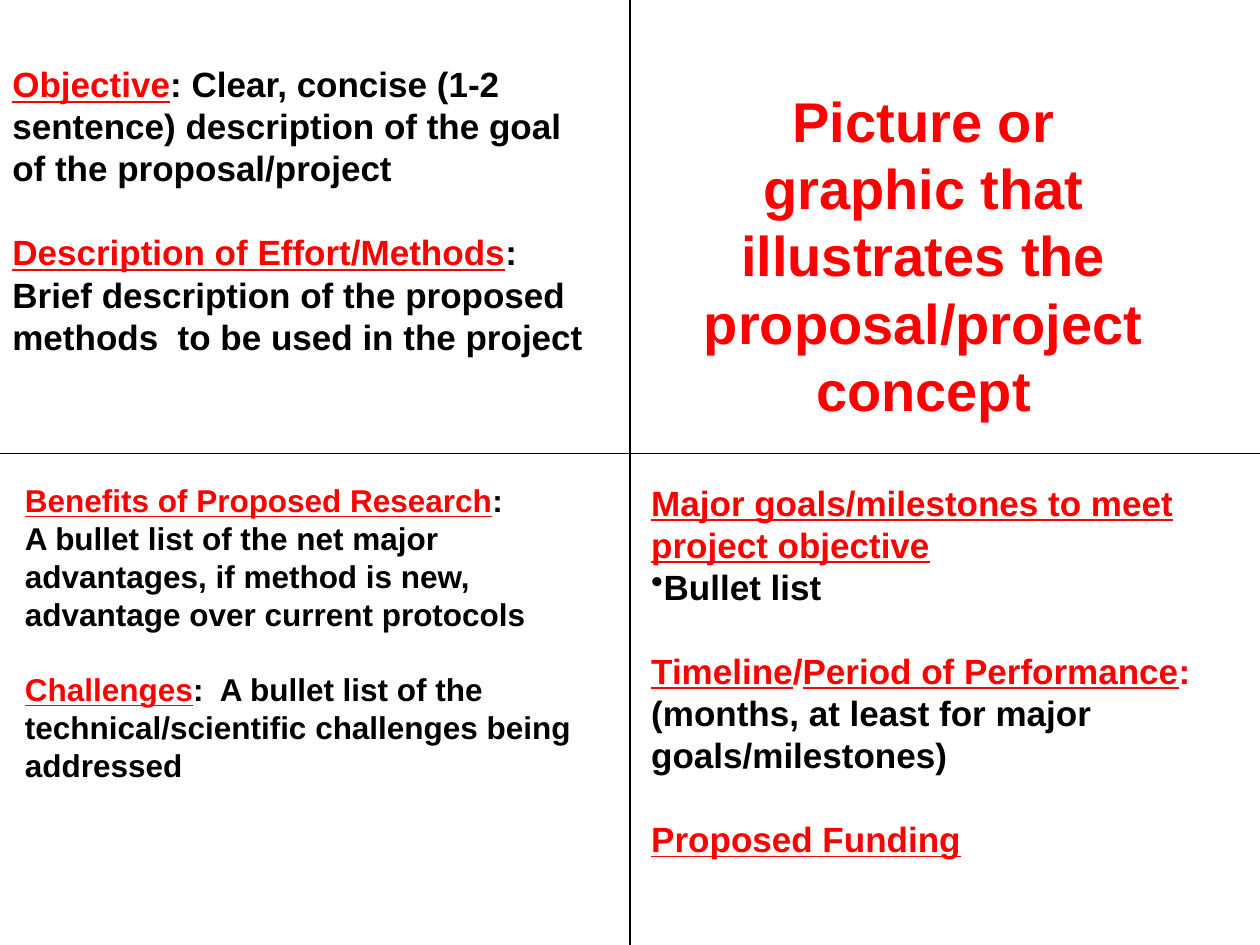
from lxml import etree
from pptx import Presentation
from pptx.dml.color import RGBColor
from pptx.enum.shapes import MSO_CONNECTOR
from pptx.enum.text import MSO_AUTO_SIZE, PP_ALIGN
from pptx.oxml.ns import qn
from pptx.util import Inches, Pt

STRAIGHT = MSO_CONNECTOR.STRAIGHT
GROW = MSO_AUTO_SIZE.SHAPE_TO_FIT_TEXT
LEFT, CENTER = PP_ALIGN.LEFT, PP_ALIGN.CENTER

COLORS = {"heading": "FF0000", "body": "000000", "line": "000000"}
FONT = "Arial"
LEADING = 1.2  # line height as a multiple of the text size


def head(text):
    return text, "heading", True


def red(text):
    return text, "heading", False


def body(text):
    return text, "body", False


class QuadChart:
    """Holds the style and the current slide; lengths are shares of the slide."""

    def __init__(self, prs):
        self.width, self.height = prs.slide_width, prs.slide_height
        self.s = prs.slides.add_slide(prs.slide_layouts[6])

    def place(self, x, y):
        return int(x * self.width), int(y * self.height)

    def rule(self, start, end):
        c = self.s.shapes.add_connector(STRAIGHT, *self.place(*start), *self.place(*end))
        c.line.color.rgb = RGBColor.from_string(COLORS["line"])
        c.line.width = Pt(1)
        etree.SubElement(c._element.spPr, qn("a:effectLst"))

    def text(self, pos, size, pt, groups, align=LEFT):
        """Groups of (bullet, runs) paragraphs, one line apart."""
        sp = self.s.shapes.add_textbox(*self.place(*pos), *self.place(*size))
        tf = sp.text_frame
        tf.word_wrap = True
        tf.auto_size = GROW
        p = None
        for g, group in enumerate(groups):
            for i, (bullet, runs) in enumerate(group):
                p = tf.add_paragraph() if p is not None else tf.paragraphs[0]
                p.alignment = align
                p.line_spacing = Pt(pt * LEADING)
                if g and i == 0:
                    p.space_before = Pt(pt * LEADING)
                if bullet:
                    etree.SubElement(p._p.get_or_add_pPr(), qn("a:buChar"), char=bullet)
                for run in runs:
                    self.run(p, pt, *run)

    def run(self, p, pt, text, color, underline):
        r = p.add_run()
        r.text = text
        r.font.name = FONT
        r.font.size = Pt(pt)
        r.font.bold = True
        r.font.underline = underline
        r.font.color.rgb = RGBColor.from_string(COLORS[color])


def main():
    prs = Presentation()
    prs.slide_width, prs.slide_height = Inches(10), Inches(7.5)
    chart = QuadChart(prs)

    # Upper left: objective and methods
    chart.text((0, 0.06), (0.476, 0.33), 20, [
        [(None, [head("Objective"),
                 body(": Clear, concise (1-2 sentence) description of the goal "
                      "of the proposal/project")])],
        [(None, [head("Description of Effort/Methods"),
                 body(": Brief description of the proposed methods  to be used "
                      "in the project")])],
    ])

    # Lower left: benefits and challenges
    chart.text((0.01, 0.503), (0.49, 0.417), 18, [
        [(None, [head("Benefits of Proposed Research"), body(":")]),
         (None, [body("A bullet list of the net major  advantages, if method is new, "
                      "advantage over current protocols")])],
        [(None, [head("Challenges"),
                 body(":  A bullet list of the technical/scientific challenges "
                      "being addressed")])],
    ])

    # Lower right: milestones, timeline and funding
    chart.text((0.507, 0.503), (0.479, 0.55), 20, [
        [(None, [head("Major goals/milestones to meet project objective")]),
         ("•", [body("Bullet list")])],
        [(None, [head("Timeline"), red("/"), head("Period of Performance"), red(": "),
                 body("(months, at least for major goals/milestones)")])],
        [(None, [head("Proposed Funding")])],
    ])

    # Quadrant dividers
    chart.rule((0.5, 0), (0.5, 1))
    chart.rule((0, 0.48), (1, 0.48))

    # Upper right: space for the concept graphic
    chart.text((0.535, 0.085), (0.396, 0.37), 32, [
        [(None, [red("Picture or graphic that illustrates the "
                     "proposal/project concept")])],
    ], CENTER)

    prs.save("out.pptx")


if __name__ == "__main__":
    main()
